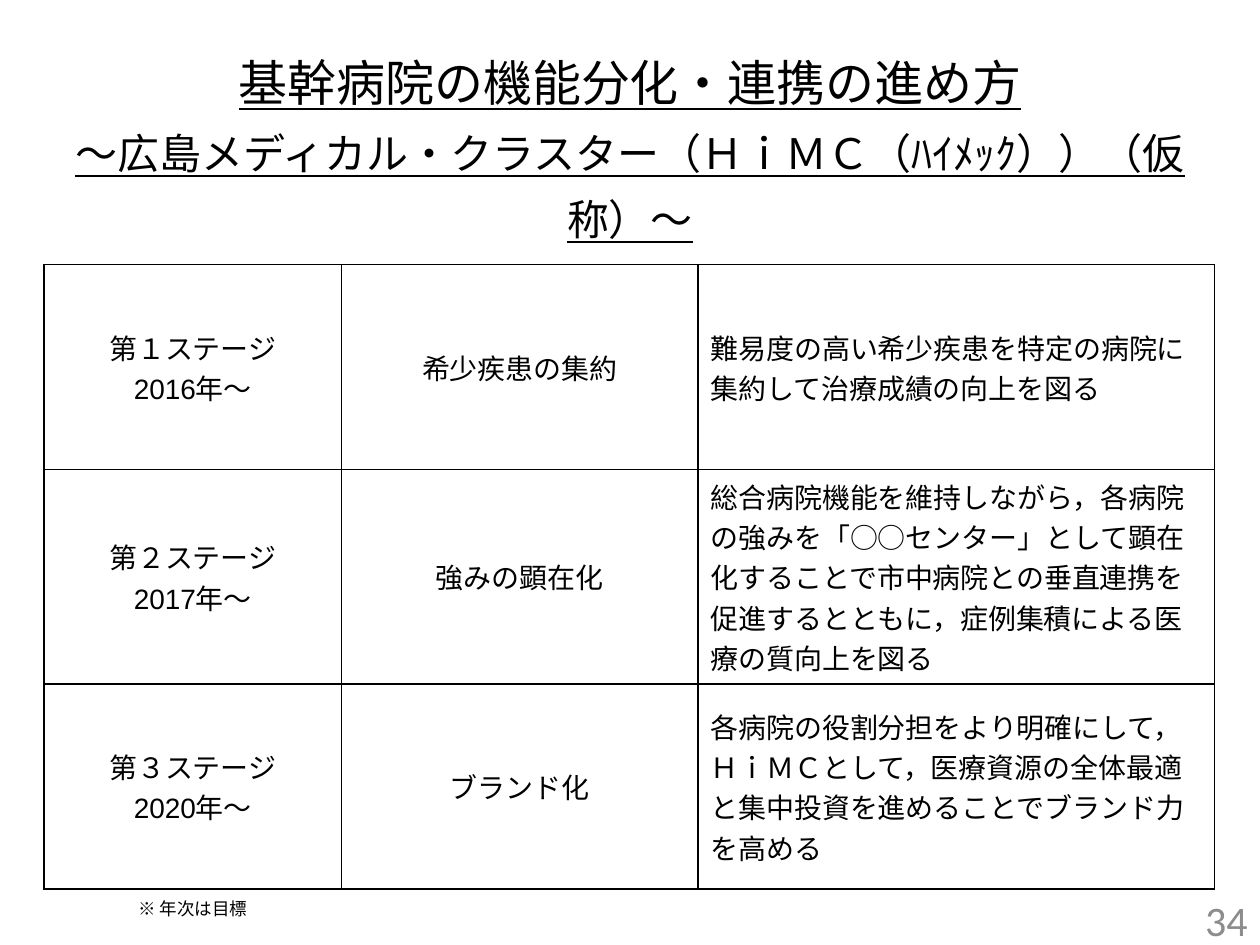
from typing import NamedTuple

from lxml import etree
from pptx import Presentation
from pptx import util as u
from pptx.dml.color import RGBColor
from pptx.enum import text
from pptx.oxml.ns import qn

BLACK = RGBColor(0x00, 0x00, 0x00)
GRAY = RGBColor(0x8C, 0x8C, 0x8C)
WIDTH, HEIGHT = u.Inches(10), u.Inches(7.5)
TABLE_LEFT = 0.035  # share of the slide width
COLUMN_SHARES = (0.236, 0.283, 0.41)
ROW_SHARE = 0.217  # share of the slide height
CENTER, LEFT, RIGHT = text.PP_ALIGN.CENTER, text.PP_ALIGN.LEFT, text.PP_ALIGN.RIGHT


class Style(NamedTuple):
    size: float
    font: str = "Calibri"
    color: RGBColor = BLACK
    underline: bool = False


class Box(NamedTuple):
    """Place on the slide, in shares of its width and height."""
    left: float
    top: float
    width: float
    height: float


class Stage(NamedTuple):
    name: str
    start: str
    theme: str
    detail: str


TITLE = (
    ("基幹病院の機能分化・連携の進め方", Style(28, underline=True)),
    ("～広島メディカル・クラスター（ＨｉＭＣ（ﾊｲﾒｯｸ））（仮称）～", Style(24, underline=True)),
)
STAGES = (
    Stage("第１ステージ", "2016年～", "希少疾患の集約",
          "難易度の高い希少疾患を特定の病院に集約して治療成績の向上を図る"),
    Stage("第２ステージ", "2017年～", "強みの顕在化",
          "総合病院機能を維持しながら，各病院の強みを「○○センター」として顕在化することで"
          "市中病院との垂直連携を促進するとともに，症例集積による医療の質向上を図る"),
    Stage("第３ステージ", "2020年～", "ブランド化",
          "各病院の役割分担をより明確にして，ＨｉＭＣとして，医療資源の全体最適と"
          "集中投資を進めることでブランド力を高める"),
)
CELL = Style(16, "Arial")


def place(sp, box: Box) -> None:
    sp.left, sp.width = int(WIDTH * box.left), int(WIDTH * box.width)
    sp.top, sp.height = int(HEIGHT * box.top), int(HEIGHT * box.height)


def write(tf, lines, align, spacing=None) -> None:
    """Fill a text frame with one paragraph per (text, style) pair."""
    for i, (line, style) in enumerate(lines):
        p = tf.add_paragraph() if i else tf.paragraphs[0]
        p.alignment = align
        if spacing:
            p.line_spacing = spacing
        r = p.add_run()
        r.text = line
        r.font.size = u.Pt(style.size)
        r.font.name = style.font
        r.font.color.rgb = style.color
        r.font.underline = style.underline


def add_label(slide, box: Box, line: str, style: Style, align, inset: float) -> None:
    sp = slide.shapes.add_textbox(0, 0, 0, 0)
    place(sp, box)
    tf = sp.text_frame
    tf.word_wrap = True
    tf.vertical_anchor = text.MSO_ANCHOR.MIDDLE
    tf.margin_left = tf.margin_right = u.Inches(inset)
    tf.margin_top = tf.margin_bottom = u.Inches(inset / 2)
    write(tf, [(line, style)], align)


def add_borders(cell) -> None:
    props = cell._tc.get_or_add_tcPr()
    for i, side in enumerate(("lnL", "lnR", "lnT", "lnB")):
        ln = etree.Element(qn(f"a:{side}"), w=str(u.Pt(1)))
        fill = etree.SubElement(ln, qn("a:solidFill"))
        etree.SubElement(fill, qn("a:srgbClr"), val=str(BLACK))
        props.insert(i, ln)


def add_stage_table(slide) -> None:
    frame = slide.shapes.add_table(len(STAGES), len(COLUMN_SHARES), 0, 0, 0, 0)
    place(frame, Box(TABLE_LEFT, 0.28, sum(COLUMN_SHARES), ROW_SHARE * len(STAGES)))
    table = frame.table
    table.first_row = table.horz_banding = False
    for column, share in zip(table.columns, COLUMN_SHARES):
        column.width = int(WIDTH * share)
    for row, stage in zip(table.rows, STAGES):
        row.height = int(HEIGHT * ROW_SHARE)
        contents = (
            ((stage.name, stage.start), CENTER),
            ((stage.theme,), CENTER),
            ((stage.detail,), LEFT),
        )
        for cell, (lines, align) in zip(row.cells, contents):
            cell.fill.background()
            cell.vertical_anchor = text.MSO_ANCHOR.MIDDLE
            write(cell.text_frame, [(line, CELL) for line in lines], align)
            add_borders(cell)


def main() -> None:
    prs = Presentation()
    prs.slide_width, prs.slide_height = WIDTH, HEIGHT
    slide = prs.slides.add_slide(prs.slide_layouts[5])

    title = slide.shapes.title
    place(title, Box(0.012, 0.068, 0.976, 0.17))
    tf = title.text_frame
    tf.auto_size = text.MSO_AUTO_SIZE.NONE
    tf.vertical_anchor = text.MSO_ANCHOR.MIDDLE
    write(tf, TITLE, CENTER, u.Pt(38))

    add_stage_table(slide)
    add_label(slide, Box(TABLE_LEFT, 0.941, COLUMN_SHARES[0], 0.041),
              "※ 年次は目標", Style(10), CENTER, 0)
    add_label(slide, Box(0.767, 0.947, 0.233, 0.053),
              "34", Style(24, color=GRAY), RIGHT, 0.1)
    prs.save("out.pptx")


if __name__ == "__main__":
    main()
